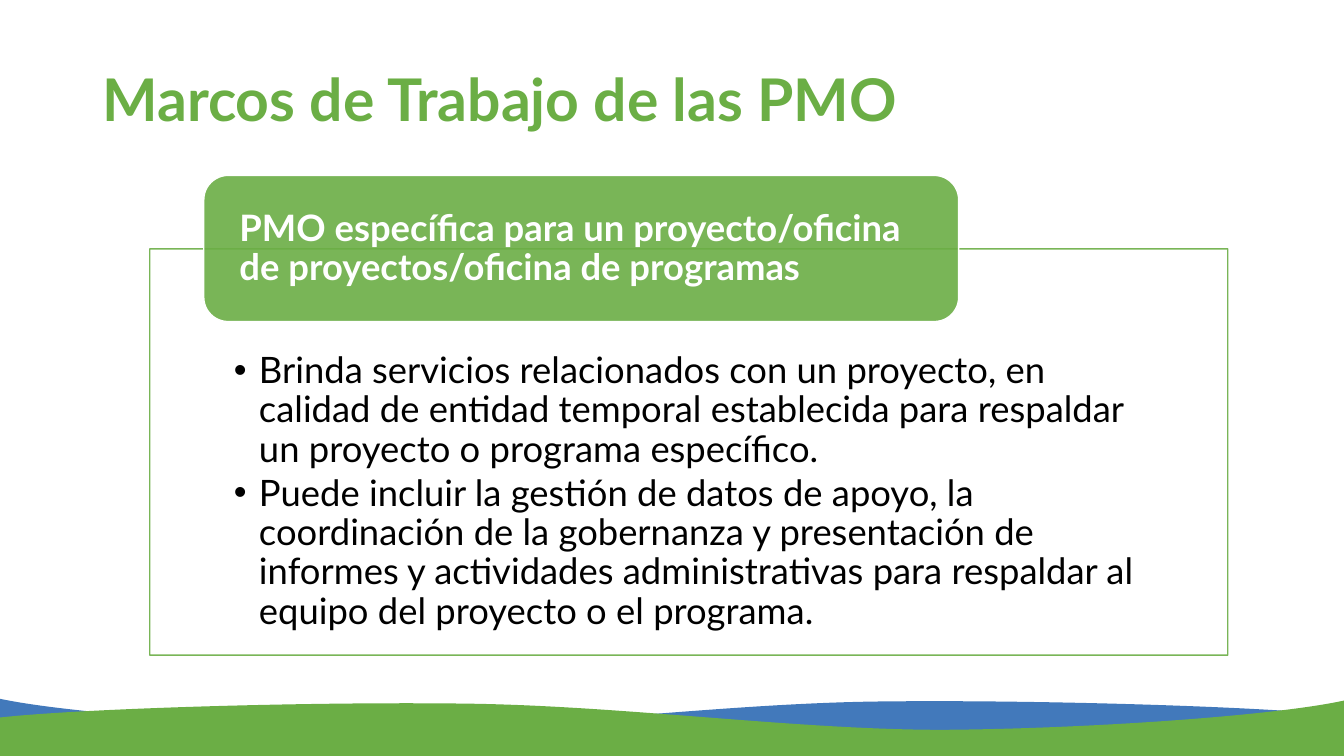
from lxml import etree
from pptx import Presentation
from pptx.dml.color import RGBColor
from pptx.enum.shapes import MSO_SHAPE
from pptx.enum.text import MSO_ANCHOR, PP_ALIGN
from pptx.oxml.ns import qn
from pptx.util import Pt

RECTANGLE, ROUNDED = MSO_SHAPE.RECTANGLE, MSO_SHAPE.ROUNDED_RECTANGLE
TOP, MIDDLE = MSO_ANCHOR.TOP, MSO_ANCHOR.MIDDLE
LEFT = PP_ALIGN.LEFT
TITLE_ONLY = 5

COLORS = {"green": "6BAE45", "blue": "4279BB", "white": "FFFFFF", "black": "000000"}
FONT = "Lato"
WIDTH, HEIGHT = 960, 540
BULLET_INDENT = 18

TITLE = "Marcos de Trabajo de las PMO"
HEADING = "PMO específica para un proyecto/oficina de proyectos/oficina de programas"
BULLETS = [
    "Brinda servicios relacionados con un proyecto, en calidad de entidad temporal "
    "establecida para respaldar un proyecto o programa específico.",
    "Puede incluir la gestión de datos de apoyo, la coordinación de la gobernanza y "
    "presentación de informes y actividades administrativas para respaldar al equipo "
    "del proyecto o el programa.",
]

TITLE_BOX = (66, 21, 828, 104.4)
BODY_BOX = (107, 177.8, 770, 290.2)
HEADING_BOX = (145.6, 125.3, 539.2, 104.4)

WAVES = [
    ("blue", (960, 511.2), [
        (904.3, 504.7), (738.7, 499.7), (626.4, 501.1),
        (514.8, 502.6), (391, 519.8), (286.6, 519.8),
        (182.2, 519.1), (49, 509.8), (-0.7, 499),
    ]),
    ("green", (-0.7, 512.6), [
        (54.7, 506.2), (220.3, 501.1), (332.6, 502.6),
        (445, 504), (568.1, 521.3), (673.2, 521.3),
        (777.6, 520.6), (910.8, 511.2), (960, 500.4),
    ]),
]


def rgb(name):
    return RGBColor.from_string(COLORS[name])


def assign(target, values):
    for name, value in values.items():
        setattr(target, name, value)


def set_opacity(solid_fill, percent):
    if percent < 100:
        etree.SubElement(solid_fill[0], qn("a:alpha"), val=str(percent * 1000))


def fill_shape(shape, color, opacity=100):
    shape.shadow.inherit = False
    shape.fill.solid()
    shape.fill.fore_color.rgb = rgb(color)
    set_opacity(shape.element.spPr.find(qn("a:solidFill")), opacity)


def set_line(shape, color, opacity=100):
    shape.line.color.rgb = rgb(color)
    shape.line.width = Pt(1)
    set_opacity(shape.element.spPr.find(qn("a:ln")).find(qn("a:solidFill")), opacity)


def write(shape, texts, size, color, bold, anchor, insets=None, space_after=0, bulleted=False):
    frame = shape.text_frame
    assign(frame, {"word_wrap": True, "vertical_anchor": anchor})
    if insets:
        sides = ("margin_left", "margin_top", "margin_right", "margin_bottom")
        assign(frame, dict(zip(sides, map(Pt, insets))))
    for index, text in enumerate(texts):
        paragraph = frame.add_paragraph() if index else frame.paragraphs[0]
        assign(paragraph, {"alignment": LEFT, "line_spacing": 0.9,
                           "space_before": Pt(0), "space_after": Pt(space_after)})
        run = paragraph.add_run()
        run.text = text
        assign(run.font, {"name": FONT, "size": Pt(size), "bold": bold})
        run.font.color.rgb = rgb(color)
        if bulleted:
            properties = paragraph._p.get_or_add_pPr()
            properties.set("marL", str(Pt(BULLET_INDENT)))
            properties.set("indent", str(-Pt(BULLET_INDENT)))
            etree.SubElement(properties, qn("a:buFont"), typeface="Arial")
            etree.SubElement(properties, qn("a:buChar"), char="•")


def bend_lines(shape, curve_point_count):
    lines = list(shape.element.iter(qn("a:lnTo")))[:curve_point_count]
    for index in range(0, curve_point_count, 3):
        curve = etree.Element(qn("a:cubicBezTo"))
        lines[index].addprevious(curve)
        for line in lines[index:index + 3]:
            curve.append(line[0])
            line.getparent().remove(line)


def add_wave(slide, color, start, curve_points):
    corners = [(curve_points[-1][0], HEIGHT), (start[0], HEIGHT)]
    builder = slide.shapes.build_freeform(*map(Pt, start))
    builder.add_line_segments([(Pt(x), Pt(y)) for x, y in curve_points + corners], close=True)
    wave = builder.convert_to_shape()
    bend_lines(wave, len(curve_points))
    fill_shape(wave, color)
    wave.line.fill.background()


def main():
    presentation = Presentation()
    assign(presentation, {"slide_width": Pt(WIDTH), "slide_height": Pt(HEIGHT)})
    slide = presentation.slides.add_slide(presentation.slide_layouts[TITLE_ONLY])

    for wave in WAVES:
        add_wave(slide, *wave)

    title = slide.shapes.title
    assign(title, dict(zip(("left", "top", "width", "height"), map(Pt, TITLE_BOX))))
    write(title, [TITLE], 42, "green", True, MIDDLE)

    body = slide.shapes.add_shape(RECTANGLE, *map(Pt, BODY_BOX))
    fill_shape(body, "white", 90)
    set_line(body, "green", 90)
    write(body, BULLETS, 26, "black", False, TOP, (60, 73.8, 60, 14.4), 3.5, True)

    heading = slide.shapes.add_shape(ROUNDED, *map(Pt, HEADING_BOX))
    fill_shape(heading, "green", 90)
    set_line(heading, "white")
    write(heading, [HEADING], 26, "white", True, MIDDLE, (20.4, 5, 20.4, 4.4))

    presentation.save("out.pptx")


if __name__ == "__main__":
    main()
